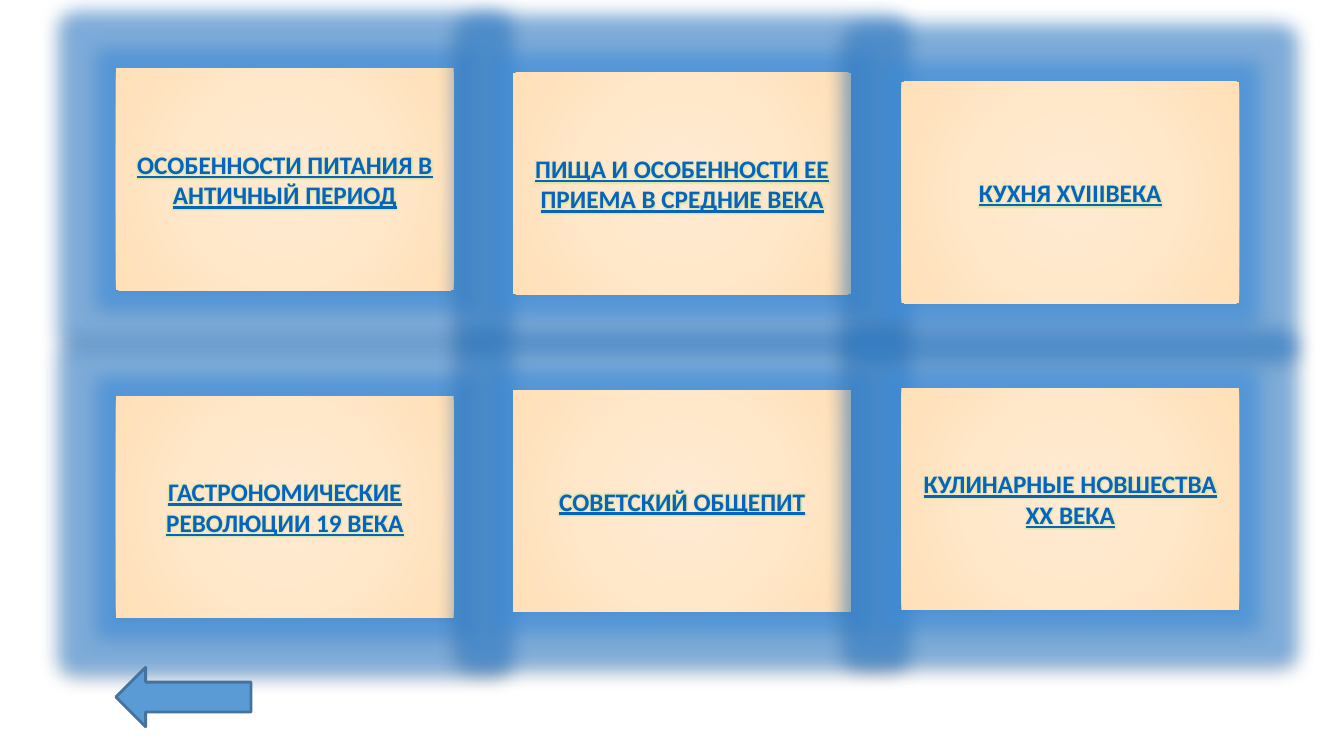
from dataclasses import dataclass

from lxml import etree
from pptx import Presentation
from pptx.dml.color import RGBColor as Rgb
from pptx.enum.shapes import MSO_SHAPE as Preset
from pptx.enum.text import MSO_ANCHOR as Anchor, PP_ALIGN as Align
from pptx.oxml import parse_xml
from pptx.util import Inches, Pt

NS = 'xmlns:a="http://schemas.openxmlformats.org/drawingml/2006/main"'


@dataclass(frozen=True)
class Theme:
    font: str = "Calibri"
    topic_size: int = 18
    link: str = "0563C1"
    arrow: str = "5B9BD5"
    arrow_line: str = "43739E"
    glow: str = "3A8DDE"
    text_glow: str = "C5E384"
    cream: tuple = ((0, "FFEBD3"), (50, "FFE7C9"), (97, "FFE0B8"), (100, "FFDFB2"))


THEME = Theme()

CARD_WIDTH, CARD_HEIGHT = 3.35, 2.2
COLUMNS = (1.15, 5.09, 8.94)
# Each row: topics with the top of their card
ROWS = (
    (("ОСОБЕННОСТИ ПИТАНИЯ В АНТИЧНЫЙ ПЕРИОД", 0.68),
     ("ПИЩА И ОСОБЕННОСТИ ЕЕ ПРИЕМА В СРЕДНИЕ ВЕКА", 0.72),
     ("КУХНЯ XVIIIВЕКА", 0.81)),
    (("ГАСТРОНОМИЧЕСКИЕ РЕВОЛЮЦИИ 19 ВЕКА", 3.93),
     ("СОВЕТСКИЙ ОБЩЕПИТ", 3.87),
     ("КУЛИНАРНЫЕ НОВШЕСТВА XX ВЕКА", 3.85)),
)


def glow(color, radius, opacity):
    return (f'<a:glow rad="{Pt(radius)}"><a:srgbClr val="{color}">'
            f'<a:alpha val="{opacity * 1000}"/></a:srgbClr></a:glow>')


def effects(*parts):
    return parse_xml(f'<a:effectLst {NS}>{"".join(parts)}</a:effectLst>')


def cream_gradient():
    stops = "".join(f'<a:gs pos="{share * 1000}"><a:srgbClr val="{color}"/></a:gs>'
                    for share, color in THEME.cream)
    center = 'l="50000" t="50000" r="50000" b="50000"'
    return parse_xml(f'<a:gradFill {NS}><a:gsLst>{stops}</a:gsLst>'
                     f'<a:path path="circle"><a:fillToRect {center}/></a:path></a:gradFill>')


def add_preset(slide, preset, box):
    return slide.shapes.add_shape(preset, *(Inches(length) for length in box))


def add_topic_card(slide, box, topic):
    card = add_preset(slide, Preset.RECTANGLE, box)
    card.line.fill.background()

    # Cream fill, blue glow and soft shadow
    properties = card.fill._xPr
    properties.find("{*}prstGeom").addnext(cream_gradient())
    shadow = (f'<a:outerShdw blurRad="{Pt(3.5)}" dist="{Pt(2.2)}" dir="5400000" '
              'rotWithShape="0"><a:srgbClr val="000000"><a:alpha val="32000"/>'
              '</a:srgbClr></a:outerShdw>')
    properties.append(effects(glow(THEME.glow, 27, 55), shadow))

    # Topic
    frame = card.text_frame
    frame.word_wrap = True
    frame.vertical_anchor = Anchor.MIDDLE
    paragraph = frame.paragraphs[0]
    paragraph.alignment = Align.CENTER
    run = paragraph.add_run()
    run.text = topic
    font = run.font
    font.name, font.size = THEME.font, Pt(THEME.topic_size)
    font.bold = font.underline = True
    font.color.rgb = Rgb.from_string(THEME.link)
    font._rPr.find("{*}solidFill").addnext(effects(glow(THEME.text_glow, 4, 60)))


def add_topic_grid(slide):
    for row in ROWS:
        for left, (topic, top) in zip(COLUMNS, row):
            add_topic_card(slide, (left, top, CARD_WIDTH, CARD_HEIGHT), topic)


def add_back_arrow(slide, box):
    arrow = add_preset(slide, Preset.LEFT_ARROW, box)
    arrow.shadow.inherit = False
    arrow.fill.solid()
    arrow.fill.fore_color.rgb = Rgb.from_string(THEME.arrow)
    arrow.line.color.rgb = Rgb.from_string(THEME.arrow_line)
    arrow.line.width = Pt(2)


def main():
    deck = Presentation()
    deck.slide_width, deck.slide_height = Inches(13.33), Inches(7.5)
    slide = deck.slides.add_slide(deck.slide_layouts[6])
    add_topic_grid(slide)
    add_back_arrow(slide, (COLUMNS[0], 6.62, 1.34, 0.59))
    deck.save("out.pptx")


if __name__ == "__main__":
    main()
